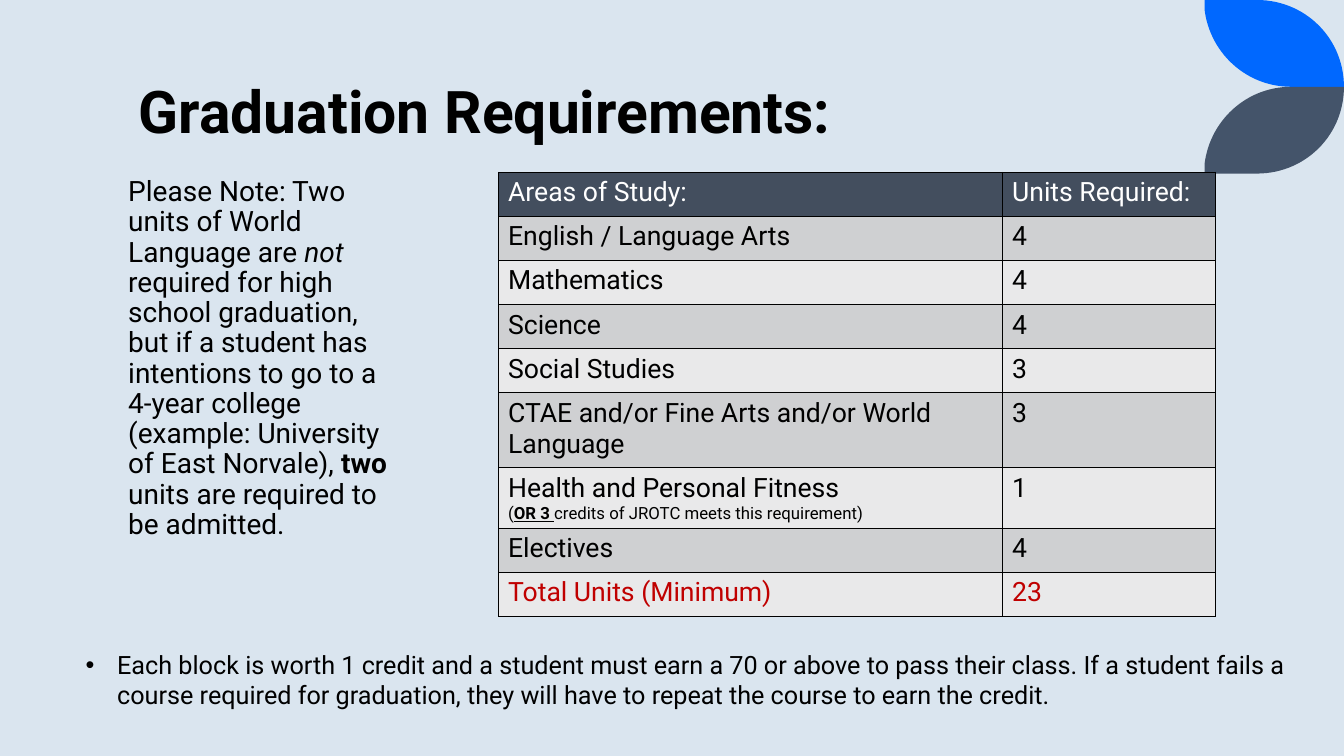
import pptx
import pptx.util
import pptx.dml.color
import pptx.enum.text
import pptx.oxml
import pptx.oxml.ns

Pt = pptx.util.Pt
RGBColor = pptx.dml.color.RGBColor
Anchor = pptx.enum.text.MSO_ANCHOR

BACKGROUND = RGBColor(0xDA, 0xE5, 0xEF)
BLUE = RGBColor(0x00, 0x68, 0xFF)
SLATE = RGBColor(0x44, 0x54, 0x6A)
HEADER = RGBColor(0x43, 0x4E, 0x5E)
BANDS = [RGBColor(0xE9, 0xE9, 0xEA), RGBColor(0xCF, 0xD0, 0xD2)]
BLACK = RGBColor(0, 0, 0)
WHITE = RGBColor(0xFF, 0xFF, 0xFF)
RED = RGBColor(0xC0, 0, 0)
FONT = "Roboto"

TITLE = [("Graduation Requirements:", "b")]
NOTE = [
    ("Please Note: Two units of World Language are ", ""),
    ("not", "i"),
    (" required for high school graduation, but if a student has intentions to go to a "
     "4-year college (example: University of East Norvale), ", ""),
    ("two", "b"),
    (" units are required to be admitted.", ""),
]
CREDIT_RULE = [
    ("Each block is worth 1 credit and a student must earn a 70 or above to pass their class. "
     "If a student fails a course required for graduation, they will have to repeat the course "
     "to earn the credit.", ""),
]
REQUIREMENTS = [
    ("Areas of Study:", "Units Required:"),
    ("English / Language Arts", "4"),
    ("Mathematics", "4"),
    ("Science", "4"),
    ("Social Studies", "3"),
    ("CTAE and/or Fine Arts and/or World Language", "3"),
    ("Health and Personal Fitness", "1"),
    ("Electives", "4"),
    ("Total Units (Minimum)", "23"),
]
FITNESS_ROW = 6
FITNESS_NOTE = [("(", ""), ("OR 3 ", "bu"), ("credits of JROTC meets this requirement)", "")]

COLUMN_WIDTHS = [360, 152]
ROW_HEIGHT = 31.5
TALL_ROWS = {5: 53.5, FITNESS_ROW: 43.2}
PETAL_HEIGHT = 62
PETAL_CURVES = [
    [(897.8, 0), (932.4, 0), (960, 27.4), (960, 62)],
    [(922.3, 62), (889.9, 62), (864, 37.4), (860.4, 6.5)],
]
CURVE_STEPS = 30


def add_runs(para, runs, size, color):
    for text, style in runs:
        span = para.add_run()
        span.text = text
        span.font.name = FONT
        span.font.size = Pt(size)
        span.font.color.rgb = color
        span.font.bold = "b" in style
        span.font.italic = "i" in style
        span.font.underline = "u" in style


def fill_placeholder(box, bounds, runs, size, anchor, spacing, before=0, bullet=None):
    box.left, box.top, box.width, box.height = map(Pt, bounds)
    frame = box.text_frame
    frame.word_wrap = True
    frame.auto_size = pptx.enum.text.MSO_AUTO_SIZE.NONE
    frame.vertical_anchor = anchor
    para = frame.paragraphs[0]
    para.alignment = pptx.enum.text.PP_ALIGN.LEFT
    para.line_spacing = spacing
    para.space_before = Pt(before)
    add_runs(para, runs, size, BLACK)
    indent = Pt(22.5) if bullet else 0
    properties = para._p.get_or_add_pPr()
    properties.set("marL", str(indent))
    properties.set("indent", str(-indent))
    tag = f'a:buChar char="{bullet}"' if bullet else "a:buNone"
    properties.append(pptx.oxml.parse_xml(f"<{tag} {pptx.oxml.ns.nsdecls('a')}/>"))


def curve_points(curve):
    for step in range(CURVE_STEPS + 1):
        t = step / CURVE_STEPS
        weights = [(1 - t) ** 3, 3 * t * (1 - t) ** 2, 3 * t * t * (1 - t), t ** 3]
        yield tuple(sum(w * point[axis] for w, point in zip(weights, curve)) for axis in (0, 1))


def add_petal(slide, color, mirrored):
    outline = [(860.4, 0)] + [point for curve in PETAL_CURVES for point in curve_points(curve)]
    if mirrored:
        outline = [(x, 2 * PETAL_HEIGHT - y) for x, y in outline]
    corners = [(Pt(x), Pt(y)) for x, y in outline]
    builder = slide.shapes.build_freeform(*corners[0], scale=1.0)
    builder.add_line_segments(corners[1:], close=True)
    petal = builder.convert_to_shape()
    petal.shadow.inherit = False
    petal.fill.solid()
    petal.fill.fore_color.rgb = color
    petal.line.fill.background()


def format_cell(cell, fill):
    cell.margin_left = cell.margin_right = Pt(6.8)
    cell.margin_top = cell.margin_bottom = Pt(3.4)
    properties = cell._tc.get_or_add_tcPr()
    for side in "LRTB":
        properties.append(pptx.oxml.parse_xml(
            f"<a:ln{side} {pptx.oxml.ns.nsdecls('a')} w=\"{Pt(1)}\"><a:solidFill>"
            f"<a:srgbClr val=\"{BLACK}\"/></a:solidFill></a:ln{side}>"))
    cell.fill.solid()
    cell.fill.fore_color.rgb = fill


def add_requirements(slide):
    heights = [TALL_ROWS.get(row, ROW_HEIGHT) for row in range(len(REQUIREMENTS))]
    table = slide.shapes.add_table(
        len(REQUIREMENTS), len(COLUMN_WIDTHS), Pt(356.2), Pt(123.1),
        Pt(sum(COLUMN_WIDTHS)), Pt(sum(heights))).table
    for column, width in zip(table.columns, COLUMN_WIDTHS):
        column.width = Pt(width)
    text_colors = {0: WHITE, len(REQUIREMENTS) - 1: RED}
    for row, values in enumerate(REQUIREMENTS):
        table.rows[row].height = Pt(heights[row])
        for column, value in enumerate(values):
            cell = table.cell(row, column)
            format_cell(cell, BANDS[row % 2] if row else HEADER)
            add_runs(cell.text_frame.paragraphs[0], [(value, "")], 19,
                     text_colors.get(row, BLACK))
    fitness = table.cell(FITNESS_ROW, 0).text_frame
    add_runs(fitness.add_paragraph(), FITNESS_NOTE, 12, BLACK)


def main():
    deck = pptx.Presentation()
    deck.slide_width, deck.slide_height = Pt(960), Pt(540)
    page = deck.slides.add_slide(deck.slide_layouts.get_by_name("Two Content"))
    page.background.fill.solid()
    page.background.fill.fore_color.rgb = BACKGROUND
    add_petal(page, BLUE, False)
    add_petal(page, SLATE, True)
    title, note, credit_rule = page.placeholders
    fill_placeholder(title, (91.8, -0.7, 763.2, 108), TITLE, 42, Anchor.BOTTOM, 0.8)
    fill_placeholder(note, (84.4, 123.1, 212.4, 306), NOTE, 20, Anchor.TOP, 0.9, before=10)
    add_requirements(page)
    fill_placeholder(credit_rule, (54, 460.1, 875.5, 51.1), CREDIT_RULE, 18, Anchor.TOP, 1.0,
                     bullet="•")
    deck.save("out.pptx")


if __name__ == "__main__":
    main()
